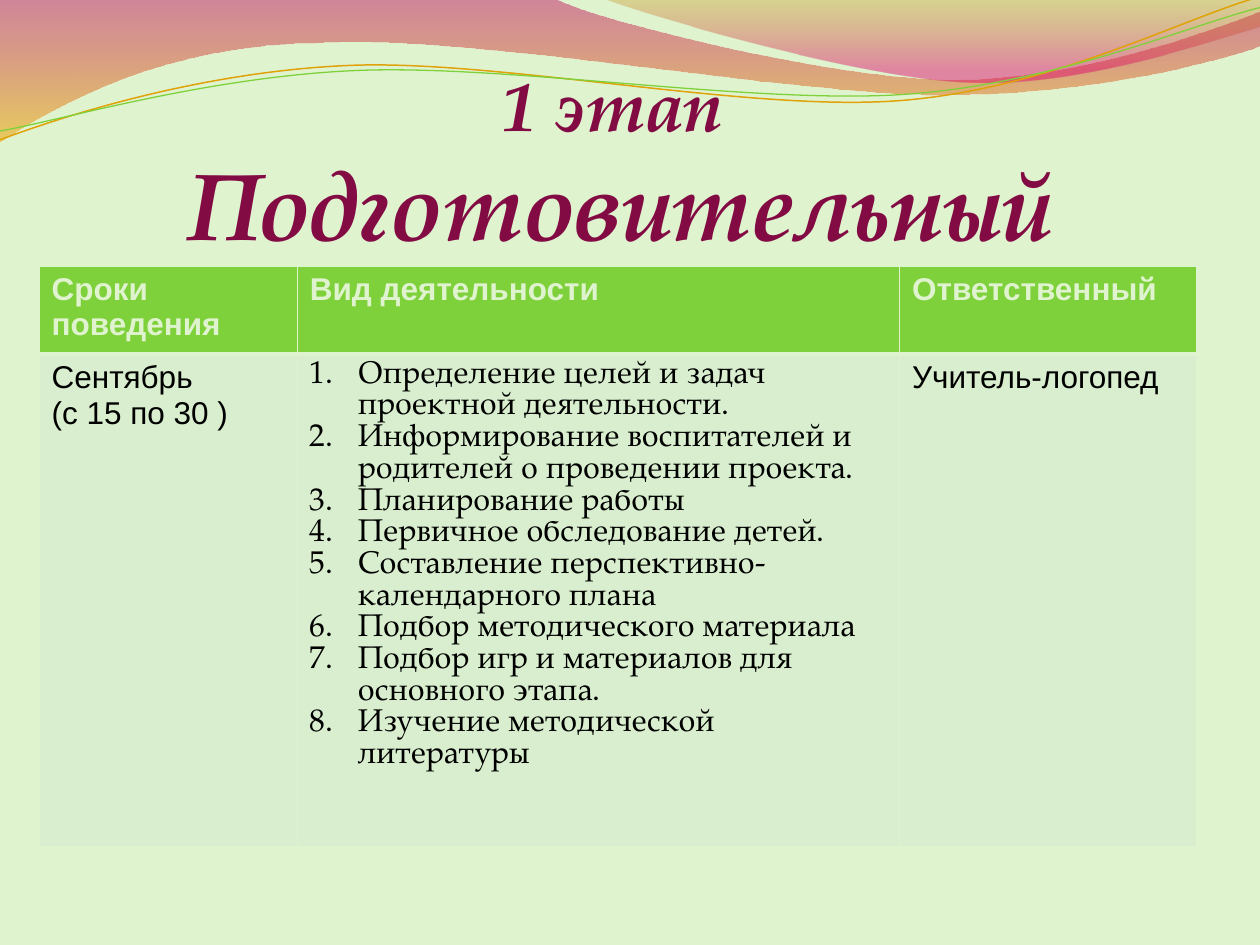
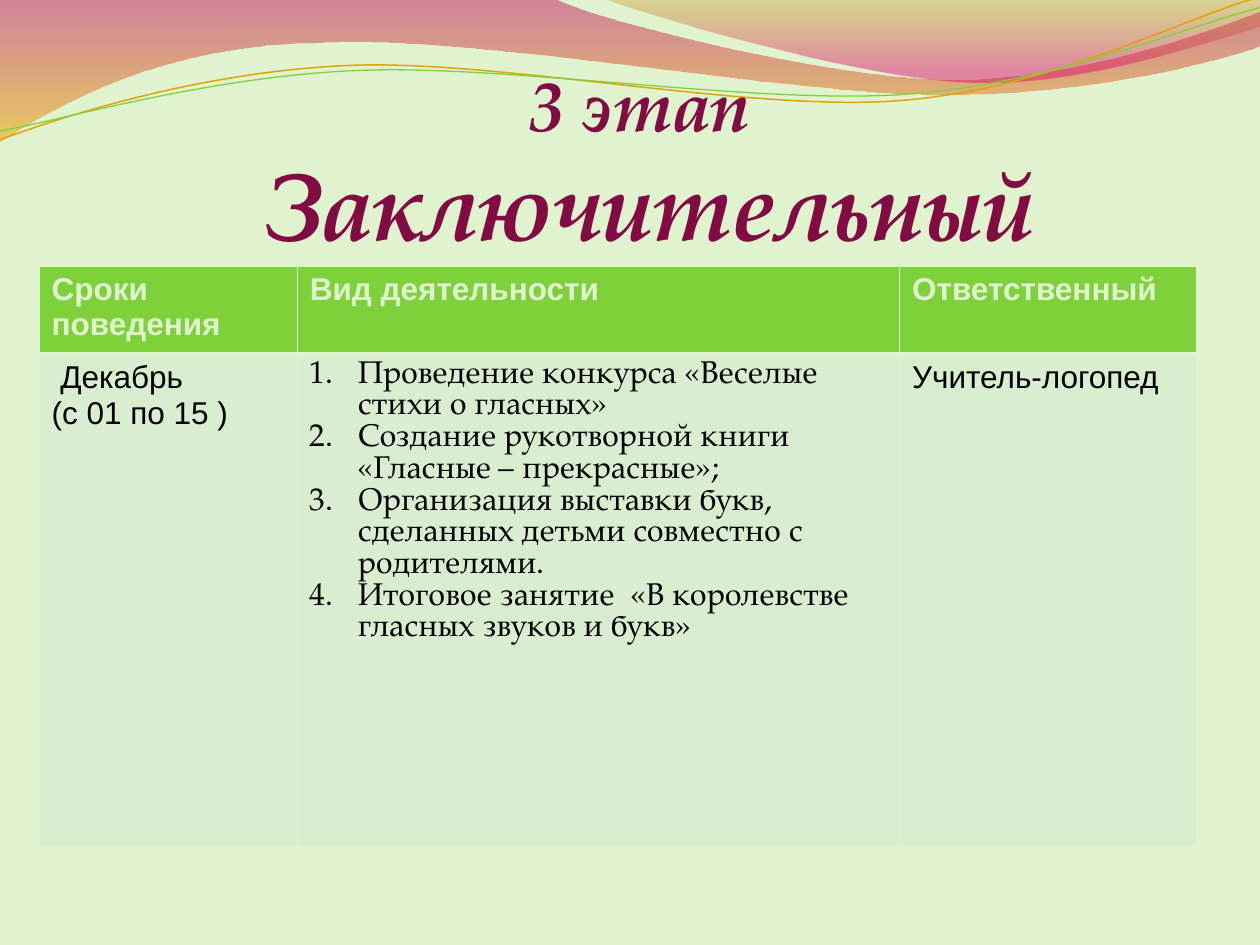
"""Build two project-stage slides with a wave header and an activity table."""
from lxml.etree import SubElement
from pptx import Presentation
from pptx.dml.color import RGBColor
from pptx.enum.text import MSO_ANCHOR, MSO_AUTO_SIZE, PP_ALIGN
from pptx.oxml.ns import qn
from pptx.util import Inches, Pt

COLORS = {
    "background": "E0F3CF", "header": "7FD13B", "body": "D8EECE",
    "text": "000000", "title": "830B44", "outline": "EE0071",
    "gold": "E0A209", "green": "7FD13B", "crimson": "BD0059",
    "amber": "F0AB00", "olive": "C38B00", "pink": "E1006B",
}
SERIF, SANS = "TeX Gyre Pagella", "Arial"

HEADERS = ["Сроки поведения", "Вид деятельности", "Ответственный"]
STAGES = [
    {
        "number": "1 этап ", "name": "Подготовительный",
        "title_box": (0.36, 0.44, 9.13, 2.59),
        "dates": ["Сентябрь", "(с 15 по 30 )"],
        "activities": [
            "Определение целей и задач проектной деятельности.",
            "Информирование воспитателей и родителей о проведении проекта.",
            "Планирование работы",
            "Первичное обследование детей.",
            "Составление перспективно-календарного плана",
            "Подбор методического материала",
            "Подбор игр и материалов для основного этапа.",
            "Изучение методической литературы",
        ],
        "responsible": ["Учитель-логопед"],
    },
    {
        "number": "3 этап ", "name": "Заключительный",
        "title_box": (1.65, 0.44, 6.98, 1.68),
        "dates": [" Декабрь", "(с 01 по 15 )"],
        "activities": [
            "Проведение конкурса «Веселые стихи о гласных»",
            "Создание рукотворной книги «Гласные – прекрасные»;",
            "Организация выставки букв, сделанных детьми совместно с родителями.",
            "Итоговое занятие  «В королевстве гласных звуков и букв»",
        ],
        "responsible": ["Учитель-логопед"],
    },
]

TABLE_LEFT, TABLE_TOP = 0.31, 2.11
COLUMN_WIDTHS = [2.05, 4.78, 2.36]
ROW_HEIGHTS = [0.7, 3.91]
LIST_INDENT = 0.38

BANDS = [
    {
        "points": [(0, -0.01), (4.4, -0.01), (4.76, 0.17, 6.64, 0.63, 7.58, 0.63),
                   (8.53, 0.63, 9.58, 0.26, 10, 0.09), (10.01, 0.36),
                   (9.83, 0.44, 8.7, 0.76, 7.46, 0.75),
                   (6.22, 0.75, 3.82, 0.28, 2.57, 0.34),
                   (1.29, 0.35, 0.46, 0.83, -0.01, 1.13)],
        "stops": [(0, "crimson", 45), (1, "amber", 55)],
    },
    {
        "points": [(4.79, -0.01), (5.09, 0.11, 6.82, 0.62, 7.69, 0.65),
                   (8.56, 0.69, 9.61, 0.32, 10, 0.21), (10, 0)],
        "stops": [(0, "olive", 30), (0.8, "pink", 45)],
    },
]
STRANDS = [
    {
        "points": [(0, 1.11), (0.48, 0.93, 1.58, 0.57, 2.77, 0.52),
                   (3.95, 0.47, 5.93, 0.89, 7.13, 0.8),
                   (8.33, 0.71, 9.38, 0.15, 9.98, -0.02)],
        "color": "gold", "width": 0.85,
    },
    {
        "points": [(0, 1.04), (0.47, 0.96, 1.64, 0.61, 2.83, 0.56),
                   (4.03, 0.51, 5.97, 0.83, 7.17, 0.75),
                   (8.36, 0.67, 9.41, 0.21, 10, 0.06)],
        "color": "green", "width": 0.75,
    },
]


def rgb(name):
    return RGBColor.from_string(COLORS[name])


def format_font(font, color, **values):
    for name, value in values.items():
        setattr(font, name, value)
    font.color.rgb = rgb(color)


def add_line_fill(line, color):
    fill = SubElement(line, qn("a:solidFill"))
    SubElement(fill, qn("a:srgbClr"), val=COLORS[color])


def bend_segments(shape, points):
    """Merge each three line segments that stand for a cubic curve."""
    segments = iter(list(shape.element.iter(qn("a:lnTo"))))
    for point in points[1:]:
        segment = next(segments)
        if len(point) == 6:
            segment.tag = qn("a:cubicBezTo")
            for _ in range(2):
                control = next(segments)
                segment.append(control[0])
                control.getparent().remove(control)


def draw_wave(slide, points, close):
    start, *others = [(Inches(point[i]), Inches(point[i + 1]))
                      for point in points for i in range(0, len(point), 2)]
    builder = slide.shapes.build_freeform(*start)
    builder.add_line_segments(others, close=close)
    shape = builder.convert_to_shape()
    bend_segments(shape, points)
    shape.shadow.inherit = False
    return shape


def draw_band(slide, band):
    shape = draw_wave(slide, band["points"], True)
    shape.line.fill.background()
    shape.fill.gradient()
    shape.fill.gradient_angle = 270
    for stop, (position, color, _) in zip(shape.fill.gradient_stops, band["stops"]):
        stop.position = position
        stop.color.rgb = rgb(color)
    for color, (_, _, opacity) in zip(shape.element.iter(qn("a:srgbClr")), band["stops"]):
        SubElement(color, qn("a:alpha"), val=str(opacity * 1000))
    return shape


def draw_strand(slide, strand):
    shape = draw_wave(slide, strand["points"], False)
    shape.fill.background()
    shape.line.color.rgb = rgb(strand["color"])
    shape.line.width = Pt(strand["width"])
    return shape


def move_waves_to_layout(slide, layout):
    waves = [draw_band(slide, band) for band in BANDS]
    waves += [draw_strand(slide, strand) for strand in STRANDS]
    for index, wave in enumerate(waves):
        layout.shapes.element.insert(2 + index, wave.element)


def fill_title(title, stage):
    for name, value in zip(("left", "top", "width", "height"), stage["title_box"]):
        setattr(title, name, Inches(value))
    frame = title.text_frame
    frame.word_wrap = True
    frame.auto_size = MSO_AUTO_SIZE.NONE
    frame.vertical_anchor = MSO_ANCHOR.TOP
    paragraph = frame.paragraphs[0]
    paragraph.alignment = PP_ALIGN.CENTER
    for key, size in (("number", 40), ("name", 54)):
        if key == "name":
            paragraph.add_line_break()
        run = paragraph.add_run()
        run.text = stage[key]
        format_font(run.font, "title", name=SERIF, size=Pt(size), bold=True, italic=True)
        properties = run.font.fill._xPr
        outline = SubElement(properties, qn("a:ln"), w=str(Pt(1.93)))
        add_line_fill(outline, "outline")
        properties.insert(0, outline)


def number_paragraph(paragraph):
    paragraph.line_spacing = Pt(18.1)
    properties = paragraph._p.get_or_add_pPr()
    properties.set("marL", str(Inches(LIST_INDENT)))
    properties.set("indent", str(-Inches(LIST_INDENT)))
    SubElement(properties, qn("a:buFont"), typeface="+mj-lt")
    SubElement(properties, qn("a:buAutoNum"), type="arabicPeriod")


def set_borders(cell, widths):
    properties = cell._tc.get_or_add_tcPr()
    for index, (edge, width) in enumerate(zip("LRTB", widths)):
        line = SubElement(properties, qn("a:ln" + edge), w=str(Pt(width)))
        add_line_fill(line, "background")
        properties.insert(index, line)


def fill_cell(cell, lines, is_header, is_list):
    cell.fill.solid()
    cell.fill.fore_color.rgb = rgb("header" if is_header else "body")
    set_borders(cell, (1, 1, 1, 3) if is_header else (1, 1, 3, 1))
    frame = cell.text_frame
    for index, text in enumerate(lines):
        paragraph = frame.add_paragraph() if index else frame.paragraphs[0]
        if is_list:
            number_paragraph(paragraph)
        run = paragraph.add_run()
        run.text = text
        format_font(run.font, "background" if is_header else "text",
                    name=SERIF if is_list else SANS, size=Pt(18), bold=is_header)


def add_activity_table(slide, stage):
    rows = [[[header] for header in HEADERS],
            [stage["dates"], stage["activities"], stage["responsible"]]]
    box = (TABLE_LEFT, TABLE_TOP, sum(COLUMN_WIDTHS), sum(ROW_HEIGHTS))
    table = slide.shapes.add_table(len(rows), len(HEADERS), *map(Inches, box)).table
    table.horz_banding = False
    for column, width in zip(table.columns, COLUMN_WIDTHS):
        column.width = Inches(width)
    for row_index, (row, height) in enumerate(zip(rows, ROW_HEIGHTS)):
        table.rows[row_index].height = Inches(height)
        for column_index, lines in enumerate(row):
            is_header = row_index == 0
            fill_cell(table.cell(row_index, column_index), lines, is_header,
                      not is_header and column_index == 1)


def main():
    presentation = Presentation()
    presentation.slide_width, presentation.slide_height = Inches(10), Inches(7.5)
    background = presentation.slide_master.background.fill
    background.solid()
    background.fore_color.rgb = rgb("background")
    layout = presentation.slide_layouts[5]
    for index, stage in enumerate(STAGES):
        slide = presentation.slides.add_slide(layout)
        if index == 0:
            move_waves_to_layout(slide, layout)
        fill_title(slide.shapes.title, stage)
        add_activity_table(slide, stage)
    presentation.save("out.pptx")


if __name__ == "__main__":
    main()
